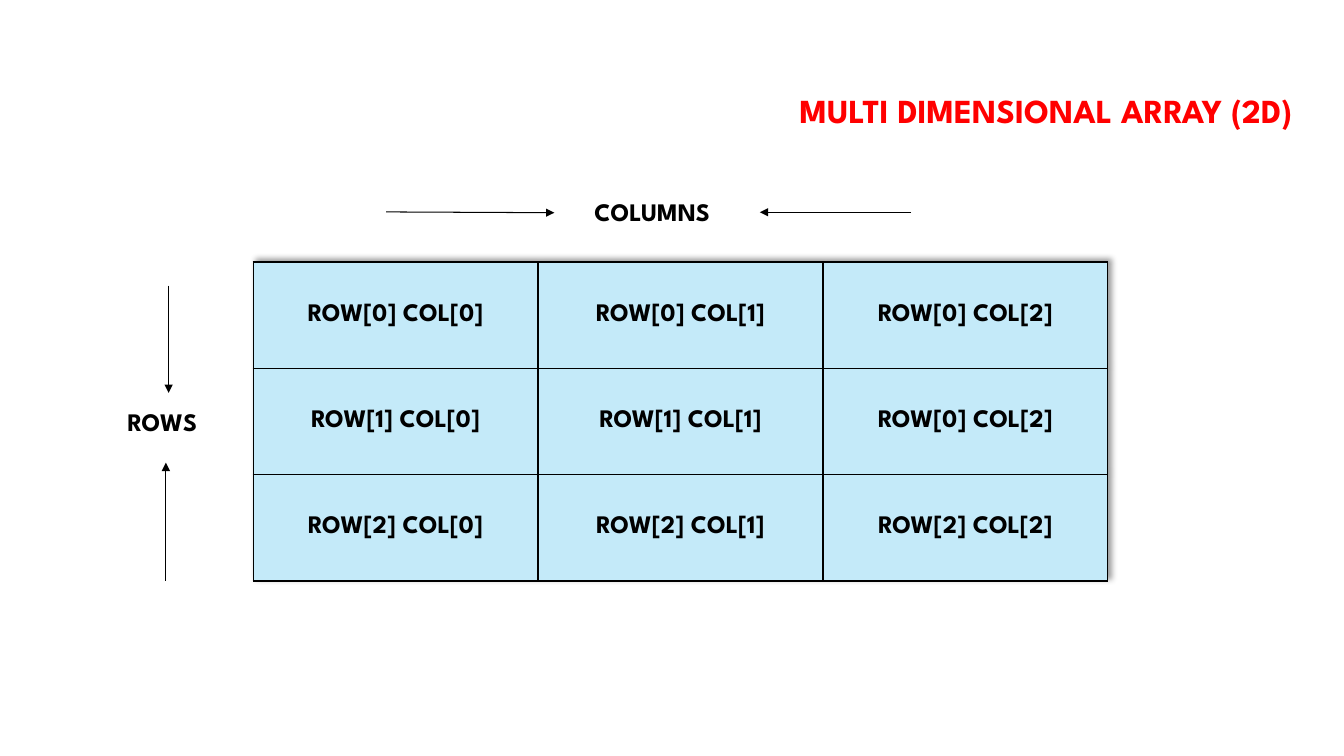
import pptx
import pptx.util
import pptx.dml.color
import pptx.enum.shapes
import pptx.enum.text
import pptx.oxml
import pptx.oxml.ns

Cm = pptx.util.Cm
Pt = pptx.util.Pt
ALIGN = pptx.enum.text.PP_ALIGN
ANCHOR = pptx.enum.text.MSO_ANCHOR
AUTO_SIZE = pptx.enum.text.MSO_AUTO_SIZE

BLACK = pptx.dml.color.RGBColor(0x00, 0x00, 0x00)
RED = pptx.dml.color.RGBColor(0xFF, 0x00, 0x00)
LIGHT_BLUE = pptx.dml.color.RGBColor(0xC4, 0xEA, 0xF9)
NAMESPACE = pptx.oxml.ns.nsdecls("a")


def write_text(text_frame, text, size, color, alignment):
    paragraph = text_frame.paragraphs[0]
    paragraph.alignment = alignment
    run = paragraph.add_run()
    run.text = text
    font_format = {"name": "League Spartan", "size": Pt(size), "bold": True}
    for attribute, value in font_format.items():
        setattr(run.font, attribute, value)
    run.font.color.rgb = color


def add_xml(parent, xml, position=None):
    element = pptx.oxml.parse_xml(xml)
    parent.insert(len(parent) if position is None else position, element)


presentation = pptx.Presentation()
presentation.slide_width = Cm(33.87)
presentation.slide_height = Cm(19.05)
slide = presentation.slides.add_slide(presentation.slide_layouts[6])

# Title
title = slide.shapes.add_textbox(Cm(8.89), Cm(1.04), Cm(23.93), Cm(3.58))
title_format = {"word_wrap": True, "vertical_anchor": ANCHOR.MIDDLE}
for attribute, value in title_format.items():
    setattr(title.text_frame, attribute, value)
write_text(title.text_frame, "MULTI DIMENSIONAL ARRAY (2D)", 24, RED, ALIGN.RIGHT)
title.text_frame.paragraphs[0].line_spacing = 0.9

# Array table
cell_texts = [
    ["ROW[0] COL[0]", "ROW[0] COL[1]", "ROW[0] COL[2]"],
    ["ROW[1] COL[0]", "ROW[1] COL[1]", "ROW[0] COL[2]"],
    ["ROW[2] COL[0]", "ROW[2] COL[1]", "ROW[2] COL[2]"],
]
column_width, row_height = Cm(7.18), Cm(2.68)
table = slide.shapes.add_table(
    3, 3, Cm(6.38), Cm(6.6), column_width * 3, row_height * 3
).table
for flag in ("first_row", "horz_banding"):
    setattr(table, flag, False)
for column in table.columns:
    column.width = column_width
for row, row_texts in zip(table.rows, cell_texts):
    row.height = row_height
    for cell, text in zip(row.cells, row_texts):
        cell.vertical_anchor = ANCHOR.MIDDLE
        write_text(cell.text_frame, text, 18, BLACK, ALIGN.CENTER)
        for side in ("lnL", "lnR", "lnT", "lnB"):
            add_xml(
                cell._tc.get_or_add_tcPr(),
                f'<a:{side} {NAMESPACE} w="{Pt(1)}"><a:solidFill>'
                f'<a:srgbClr val="{BLACK}"/></a:solidFill></a:{side}>',
            )
        cell.fill.solid()
        cell.fill.fore_color.rgb = LIGHT_BLUE

# Soft shadow above and to the right of the table
add_xml(
    table._tbl.tblPr,
    f'<a:effectLst {NAMESPACE}><a:outerShdw blurRad="{Pt(4)}" dist="{Pt(3)}" '
    f'dir="18900000" algn="bl" rotWithShape="0"><a:srgbClr val="{BLACK}">'
    '<a:alpha val="40000"/></a:srgbClr></a:outerShdw></a:effectLst>',
    0,
)

# Axis labels
axis_labels = [
    ("ROWS", 2.97, 10.11, 2.39),
    ("COLUMNS", 14.73, 4.83, 3.68),
]
label_format = {"word_wrap": False, "auto_size": AUTO_SIZE.SHAPE_TO_FIT_TEXT}
for text, left, top, width in axis_labels:
    label = slide.shapes.add_textbox(Cm(left), Cm(top), Cm(width), Cm(1.02))
    for attribute, value in label_format.items():
        setattr(label.text_frame, attribute, value)
    write_text(label.text_frame, text, 18, BLACK, ALIGN.LEFT)

# Arrows pointing at the axis labels
arrows = [
    (4.25, 7.2, 4.25, 9.9),
    (4.18, 14.63, 4.18, 11.66),
    (9.73, 5.34, 13.97, 5.36),
    (22.96, 5.35, 19.15, 5.35),
]
for arrow in arrows:
    connector = slide.shapes.add_connector(
        pptx.enum.shapes.MSO_CONNECTOR.STRAIGHT, *map(Cm, arrow)
    )
    connector.line.width = Pt(0.75)
    connector.line.color.rgb = BLACK
    add_xml(connector.line._get_or_add_ln(), f'<a:tailEnd {NAMESPACE} type="triangle"/>')
    add_xml(connector._element.spPr, f"<a:effectLst {NAMESPACE}/>")

presentation.save("out.pptx")
